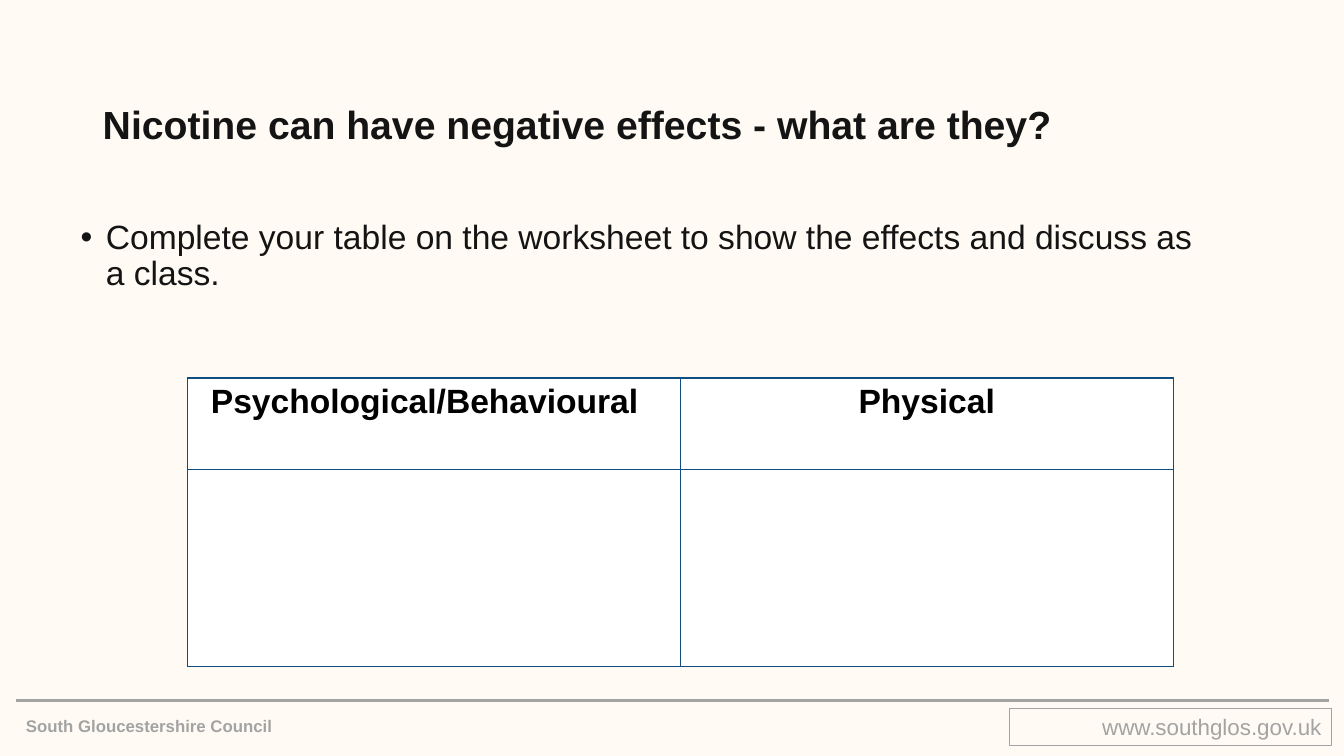
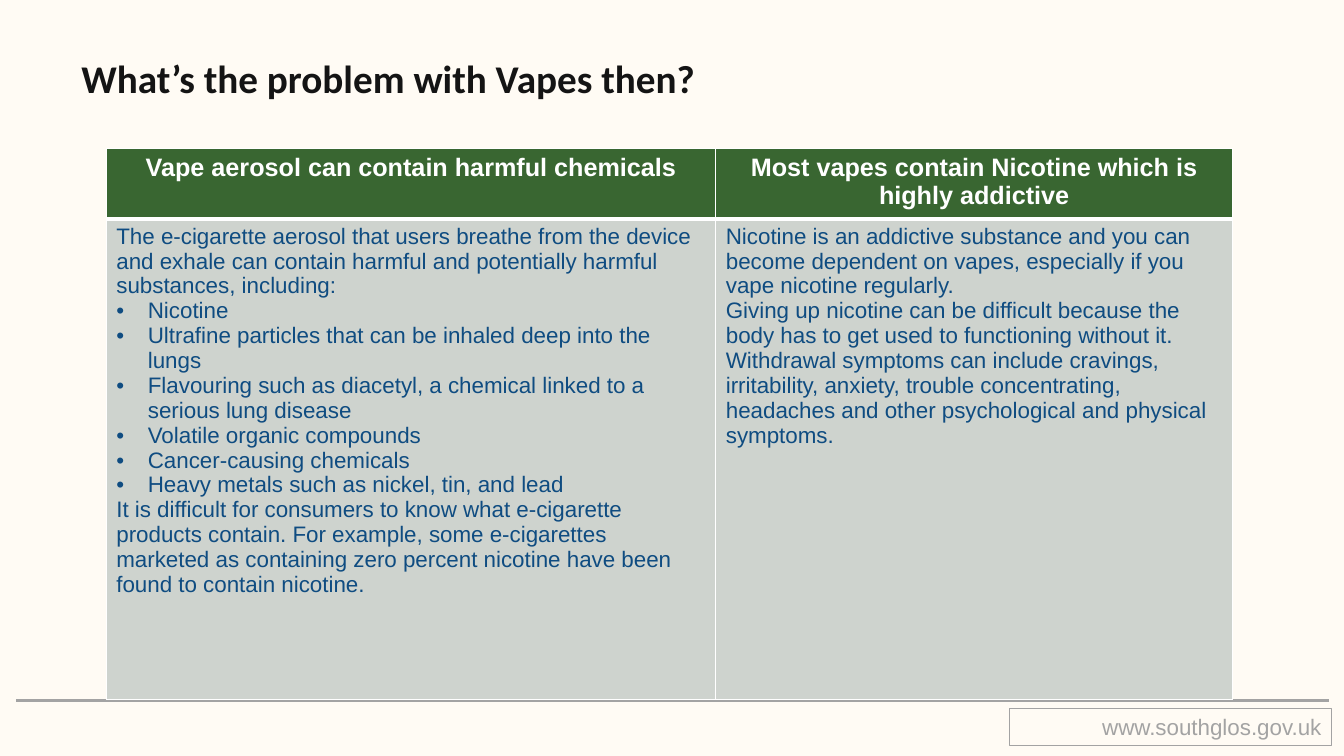
"""Build two lesson slides about nicotine and vapes."""
from lxml.etree import SubElement
from pptx import Presentation
from pptx.dml.color import RGBColor
from pptx.enum.shapes import MSO_CONNECTOR, MSO_SHAPE
from pptx.enum.text import MSO_ANCHOR, MSO_AUTO_SIZE, PP_ALIGN
from pptx.oxml.ns import qn
from pptx.util import Pt

COLOURS = {
    "background": "FFFBF4", "ink": "141414", "black": "000000", "white": "FFFFFF",
    "grey": "A3A3A3", "blue": "0F4C81", "green": "396631", "panel": "CED3CE",
}
SLIDE_SIZE = (960, 540)
RULE = (11.5, 500.4, 938, 0)
WEB_BOX = (721.4, 506.2, 229.7, 26.6)
COUNCIL_BOX = (11.5, 506.2, 324, 24.5)

HARMFUL_CHEMICALS = [
    "Nicotine",
    "Ultrafine particles that can be inhaled deep into the lungs",
    "Flavouring such as diacetyl, a chemical linked to a serious lung disease",
    "Volatile organic compounds",
    "Cancer-causing chemicals",
    "Heavy metals such as nickel, tin, and lead",
]
AEROSOL_INTRO = (
    "The e-cigarette aerosol that users breathe from the device and exhale can "
    "contain harmful and potentially harmful substances, including:"
)
AEROSOL_CAUTION = (
    "It is difficult for consumers to know what e-cigarette products contain. For "
    "example, some e-cigarettes marketed as containing zero percent nicotine have "
    "been found to contain nicotine."
)
ADDICTION = [
    "Nicotine is an addictive substance and you can become dependent on vapes, "
    "especially if you vape nicotine regularly.",
    "Giving up nicotine can be difficult because the body has to get used to "
    "functioning without it. Withdrawal symptoms can include cravings, irritability, "
    "anxiety, trouble concentrating, headaches and other psychological and physical "
    "symptoms.",
]


def colour(name):
    """Return a named colour."""
    return RGBColor.from_string(COLOURS[name])


def points(values):
    """Convert numbers to point lengths."""
    return [Pt(value) for value in values]


def write(frame, text, size=16, ink="ink", bold=False, font="Arial",
          align=PP_ALIGN.LEFT, spacing=None, indent=0):
    """Add a formatted paragraph, bulleted when it has an indent."""
    paragraph = frame.paragraphs[0] if not frame.text else frame.add_paragraph()
    if indent:
        properties = paragraph._p.get_or_add_pPr()
        properties.set("marL", str(Pt(indent)))
        properties.set("indent", str(-Pt(indent)))
        SubElement(properties, qn("a:buFont"), typeface="Arial")
        SubElement(properties, qn("a:buChar"), char="•")
    paragraph.alignment = align
    paragraph.space_before = Pt(0)
    if spacing:
        paragraph.line_spacing = spacing
    run = paragraph.add_run()
    run.text = text
    run.font.name = font
    run.font.size = Pt(size)
    run.font.bold = bold
    run.font.color.rgb = colour(ink)


def place(placeholder, box, anchor):
    """Move a placeholder to a box and return its text frame."""
    placeholder.left, placeholder.top, placeholder.width, placeholder.height = points(box)
    frame = placeholder.text_frame
    frame.word_wrap = True
    frame.auto_size = MSO_AUTO_SIZE.NONE
    frame.vertical_anchor = anchor
    return frame


def add_title(slide, box, text, font="Arial"):
    """Fill the slide title."""
    frame = place(slide.shapes.title, box, MSO_ANCHOR.MIDDLE)
    write(frame, text, size=28, bold=True, font=font, spacing=0.9)


def add_footer(slide, rule_box, web_box):
    """Draw the rule and the web address."""
    left, top, width, height = rule_box
    rule = slide.shapes.add_connector(
        MSO_CONNECTOR.STRAIGHT, *points((left, top, left + width, top + height)))
    rule.line.color.rgb = colour("grey")
    rule.line.width = Pt(0)
    SubElement(rule._element.spPr, qn("a:effectLst"))
    address = slide.shapes.add_shape(MSO_SHAPE.RECTANGLE, *points(web_box))
    address.shadow.inherit = False
    address.fill.background()
    address.line.color.rgb = colour("grey")
    address.line.width = Pt(0.75)
    address.text_frame.vertical_anchor = MSO_ANCHOR.TOP
    write(address.text_frame, "www.southglos.gov.uk", ink="grey", align=PP_ALIGN.RIGHT)


def add_council(slide, box):
    """Add the council name."""
    frame = slide.shapes.add_textbox(*points(box)).text_frame
    frame.word_wrap = True
    frame.vertical_anchor = MSO_ANCHOR.MIDDLE
    write(frame, "South Gloucestershire Council", size=12, ink="grey", bold=True)


def style_cell(cell, fill, border, bottom=1):
    """Fill a cell and draw its four borders."""
    properties = cell._tc.get_or_add_tcPr()
    for side, width in (("L", 1), ("R", 1), ("T", 1), ("B", bottom)):
        line = SubElement(properties, qn(f"a:ln{side}"), w=str(Pt(width)))
        solid = SubElement(line, qn("a:solidFill"))
        SubElement(solid, qn("a:srgbClr"), val=COLOURS[border])
    cell.fill.solid()
    cell.fill.fore_color.rgb = colour(fill)


def add_grid(slide, origin, widths, heights, fills, border, header_bottom=1):
    """Add a two-row table with one fill per row."""
    table = slide.shapes.add_table(
        len(heights), len(widths), *points((*origin, sum(widths), sum(heights)))).table
    table.first_row = table.horz_banding = False
    for column, width in zip(table.columns, widths):
        column.width = Pt(width)
    for index, (row, height, fill) in enumerate(zip(table.rows, heights, fills)):
        row.height = Pt(height)
        for cell in row.cells:
            style_cell(cell, fill, border, 1 if index else header_bottom)
    return table


def write_headings(table, headings, **style):
    """Write the centred bold header row."""
    for cell, heading in zip(table.rows[0].cells, headings):
        write(cell.text_frame, heading, bold=True, align=PP_ALIGN.CENTER, **style)


def build_effects(deck):
    """Build the worksheet slide."""
    slide = deck.slides.add_slide(deck.slide_layouts[1])
    add_footer(slide, RULE, WEB_BOX)
    add_title(slide, (66.2, 38.2, 722.9, 104.4),
              "Nicotine can have negative effects - what are they?")
    task = place(slide.placeholders[1], (50.4, 154, 828, 253.4), MSO_ANCHOR.TOP)
    write(task, "Complete your table on the worksheet to show the effects and discuss "
          "as a class.", size=24, spacing=0.9, indent=18)
    add_council(slide, COUNCIL_BOX)
    effects = add_grid(slide, (134, 270), (352, 352), (65.5, 140.4),
                       ("white", "white"), "blue")
    effects.cell(0, 0).margin_right = Pt(20.5)
    write_headings(effects, ("Psychological/Behavioural", "Physical"), size=24, ink="black")


def build_problem(deck):
    """Build the slide on the harms of vapes."""
    slide = deck.slides.add_slide(deck.slide_layouts[5])
    add_footer(slide, RULE, WEB_BOX)
    add_title(slide, (51, 28.8, 722.9, 57.6),
              "What’s the problem with Vapes then?", font="Calibri")
    harms = add_grid(slide, (75.9, 106), (435.4, 369.2), (50.4, 343.4),
                     ("green", "panel"), "white", header_bottom=3)
    write_headings(harms, ("Vape aerosol can contain harmful chemicals",
                           "Most vapes contain Nicotine which is highly addictive"),
                   size=18, ink="white")
    aerosol, addiction = (cell.text_frame for cell in harms.rows[1].cells)
    write(aerosol, AEROSOL_INTRO, ink="blue")
    for chemical in HARMFUL_CHEMICALS:
        write(aerosol, chemical, ink="blue", indent=22.5)
    write(aerosol, AEROSOL_CAUTION, ink="blue")
    for fact in ADDICTION:
        write(addiction, fact, ink="blue")


def main():
    """Build and save the deck."""
    deck = Presentation()
    deck.slide_width, deck.slide_height = points(SLIDE_SIZE)
    backdrop = deck.slide_master.background.fill
    backdrop.solid()
    backdrop.fore_color.rgb = colour("background")
    build_effects(deck)
    build_problem(deck)
    deck.save("out.pptx")


if __name__ == "__main__":
    main()
